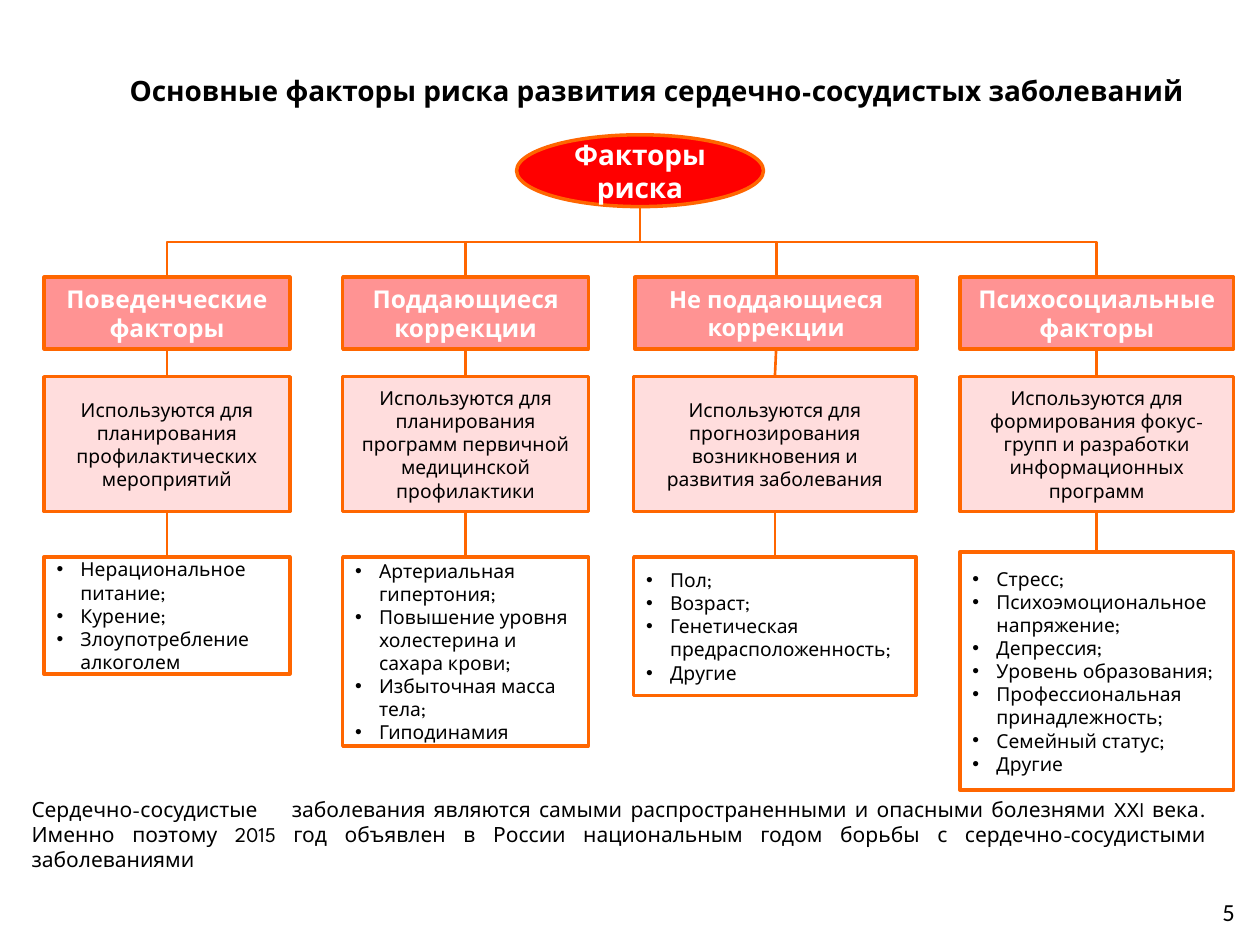
from lxml.etree import SubElement
from pptx import Presentation
from pptx.dml.color import RGBColor
from pptx.enum.shapes import MSO_CONNECTOR, MSO_SHAPE
from pptx.enum.text import MSO_ANCHOR, MSO_AUTO_SIZE, PP_ALIGN
from pptx.oxml.ns import qn
from pptx.util import Pt

SCALE = 9144
ORANGE = RGBColor(0xFF, 0x66, 0x00)
RED = RGBColor(0xFF, 0x00, 0x00)
ROSE = RGBColor(0xFF, 0x93, 0x93)
PINK = RGBColor(0xFF, 0xDD, 0xDD)
WHITE = RGBColor(0xFF, 0xFF, 0xFF)
BLACK = RGBColor(0x00, 0x00, 0x00)

ROOT = (410, 107, 196, 57)
HEAD_TOP, HEAD_HEIGHT = 220, 57
PURPOSE_TOP, PURPOSE_HEIGHT = 299, 107
COLUMNS = [
    dict(left=35, width=195, list_top=442, list_height=93,
         heading="Поведенческие факторы",
         purpose="Используются для планирования профилактических мероприятий",
         factors=["Нерациональное питание;", "Курение;", "Злоупотребление алкоголем"]),
    dict(left=272, width=195, list_top=442, list_height=150,
         heading="Поддающиеся коррекции",
         purpose="Используются для планирования программ первичной медицинской профилактики",
         factors=["Артериальная гипертония;", "Повышение уровня холестерина и сахара крови;",
                  "Избыточная масса тела;", "Гиподинамия"]),
    dict(left=503, width=224, list_top=442, list_height=110,
         heading="Не поддающиеся коррекции", heading_size=13.5, heading_shift=1,
         purpose="Используются для прогнозирования возникновения и развития заболевания",
         factors=["Пол;", "Возраст;", "Генетическая предрасположенность;", "Другие"]),
    dict(left=762, width=217, list_top=438, list_height=189,
         heading="Психосоциальные факторы",
         purpose="Используются для формирования фокус-групп и разработки информационных программ",
         factors=["Стресс;", "Психоэмоциональное напряжение;", "Депрессия;",
                  "Уровень образования;", "Профессиональная принадлежность;",
                  "Семейный статус;", "Другие"]),
]
TITLE = "Основные факторы риска развития сердечно-сосудистых заболеваний"
SUMMARY = ("Сердечно-сосудистые\t заболевания являются самыми распространенными и опасными "
           "болезнями XXI века. Именно поэтому 2015 год объявлен в России национальным годом "
           "борьбы с сердечно-сосудистыми заболеваниями")


def px(*lengths):
    """Turn px lengths into EMU."""
    return [round(length * SCALE) for length in lengths]


def write(frame, *lines, size=11, color=BLACK, bold=False, font="League Spartan",
          align=PP_ALIGN.CENTER, anchor=MSO_ANCHOR.MIDDLE, bullet=False):
    """Fill a text frame with one formatted paragraph per line."""
    frame.word_wrap = True
    frame.auto_size = MSO_AUTO_SIZE.NONE
    frame.vertical_anchor = anchor
    for index, line in enumerate(lines):
        para = frame.add_paragraph() if index else frame.paragraphs[0]
        para.alignment = align
        para.space_before = Pt(0)
        properties = para._p.get_or_add_pPr()
        indent = px(19)[0] if bullet else 0
        properties.set("marL", str(indent))
        properties.set("indent", str(-indent))
        if bullet:
            SubElement(properties, qn("a:buFont"), typeface="Arial")
            SubElement(properties, qn("a:buChar"), char="•")
        else:
            SubElement(properties, qn("a:buNone"))
        span = para.add_run()
        span.text = line
        span.font.size = Pt(size)
        span.font.name = font
        span.font.bold = bold
        span.font.color.rgb = color


def add_panel(page, box, fill, *lines, shape=MSO_SHAPE.RECTANGLE, **style):
    """Place an outlined shape with text in the given box."""
    panel = page.shapes.add_shape(shape, *px(*box))
    panel.shadow.inherit = False
    panel.fill.solid()
    panel.fill.fore_color.rgb = fill
    panel.line.color.rgb = ORANGE
    panel.line.width = Pt(2)
    write(panel.text_frame, *lines, **style)


def add_line(page, start, end, kind=MSO_CONNECTOR.STRAIGHT):
    """Draw an orange connector between two points."""
    line = page.shapes.add_connector(kind, *px(*start, *end))
    line.line.color.rgb = ORANGE
    line.line.width = Pt(1.5)
    SubElement(line._element.spPr, qn("a:effectLst"))
    return line


def add_branch(page, start, end):
    """Draw an elbow that leaves downward, runs across and arrives downward."""
    middle_x, middle_y = (start[0] + end[0]) / 2, (start[1] + end[1]) / 2
    reach, drop = abs(end[0] - start[0]) / 2, (end[1] - start[1]) / 2
    rightward = end[0] > start[0]
    offset = drop if rightward else -drop
    branch = add_line(page, (middle_x + offset, middle_y - reach),
                      (middle_x - offset, middle_y + reach), MSO_CONNECTOR.ELBOW)
    branch._element.spPr.find(qn("a:xfrm")).set("rot", "16200000" if rightward else "5400000")


def add_column(page, left, width, list_top, list_height, heading, purpose, factors,
               heading_size=14, heading_shift=0):
    """Stack heading, purpose and factor list, joined to each other and to the root."""
    center = left + width / 2
    heading_center = center + heading_shift
    root_left, root_top, root_width, root_height = ROOT
    add_branch(page, (root_left + root_width / 2, root_top + root_height),
               (heading_center, HEAD_TOP))
    add_line(page, (heading_center, HEAD_TOP + HEAD_HEIGHT), (center, PURPOSE_TOP))
    add_line(page, (center, PURPOSE_TOP + PURPOSE_HEIGHT), (center, list_top))
    add_panel(page, (left + heading_shift, HEAD_TOP, width, HEAD_HEIGHT), ROSE, heading,
              size=heading_size, color=WHITE, bold=True)
    add_panel(page, (left, PURPOSE_TOP, width, PURPOSE_HEIGHT), PINK, purpose)
    add_panel(page, (left, list_top, width, list_height), WHITE, *factors,
              align=PP_ALIGN.LEFT, bullet=True)


def place_text(holder, box, text, **style):
    """Move a text holder to the given box and write into it."""
    holder.left, holder.top, holder.width, holder.height = px(*box)
    write(holder.text_frame, text, **style)


def main():
    """Build the slide and save it."""
    deck = Presentation()
    deck.slide_width, deck.slide_height = px(1000, 750)
    page = deck.slides.add_slide(deck.slide_layouts[1])
    place_text(page.shapes.title, (78, 44, 872, 55), TITLE,
               size=16, bold=True, align=PP_ALIGN.RIGHT)
    place_text(page.placeholders[1], (15, 627, 953, 64), SUMMARY,
               size=12, align=PP_ALIGN.JUSTIFY, anchor=MSO_ANCHOR.TOP)
    number_box = (757, 707, 233, 52)
    place_text(page.shapes.add_textbox(*px(*number_box)), number_box, "5",
               size=14, font="Calibri", align=PP_ALIGN.RIGHT, anchor=MSO_ANCHOR.TOP)
    for column in COLUMNS:
        add_column(page, **column)
    add_panel(page, ROOT, RED, "Факторы риска", shape=MSO_SHAPE.OVAL,
              size=16, color=WHITE, bold=True)
    deck.save("out.pptx")


if __name__ == "__main__":
    main()
